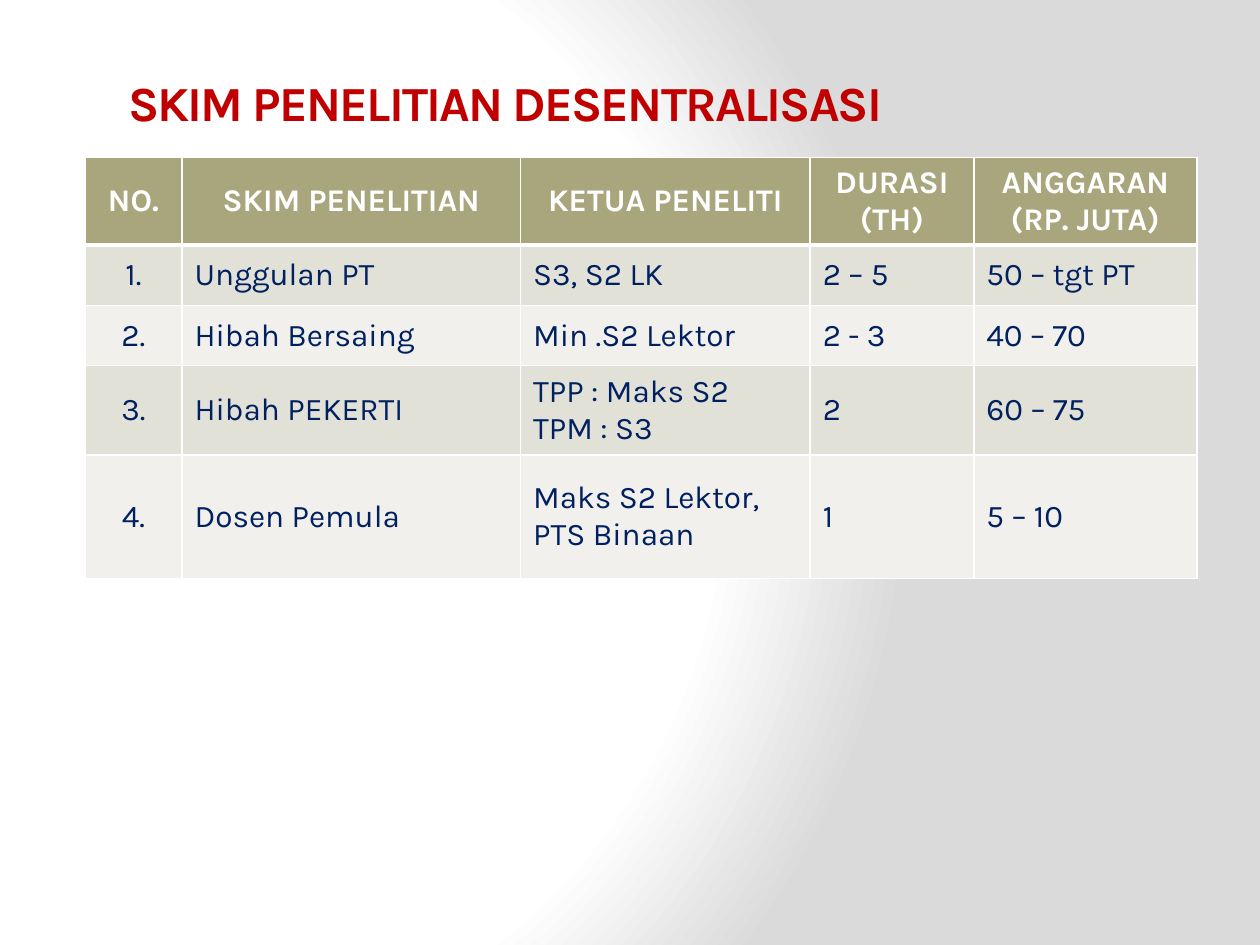
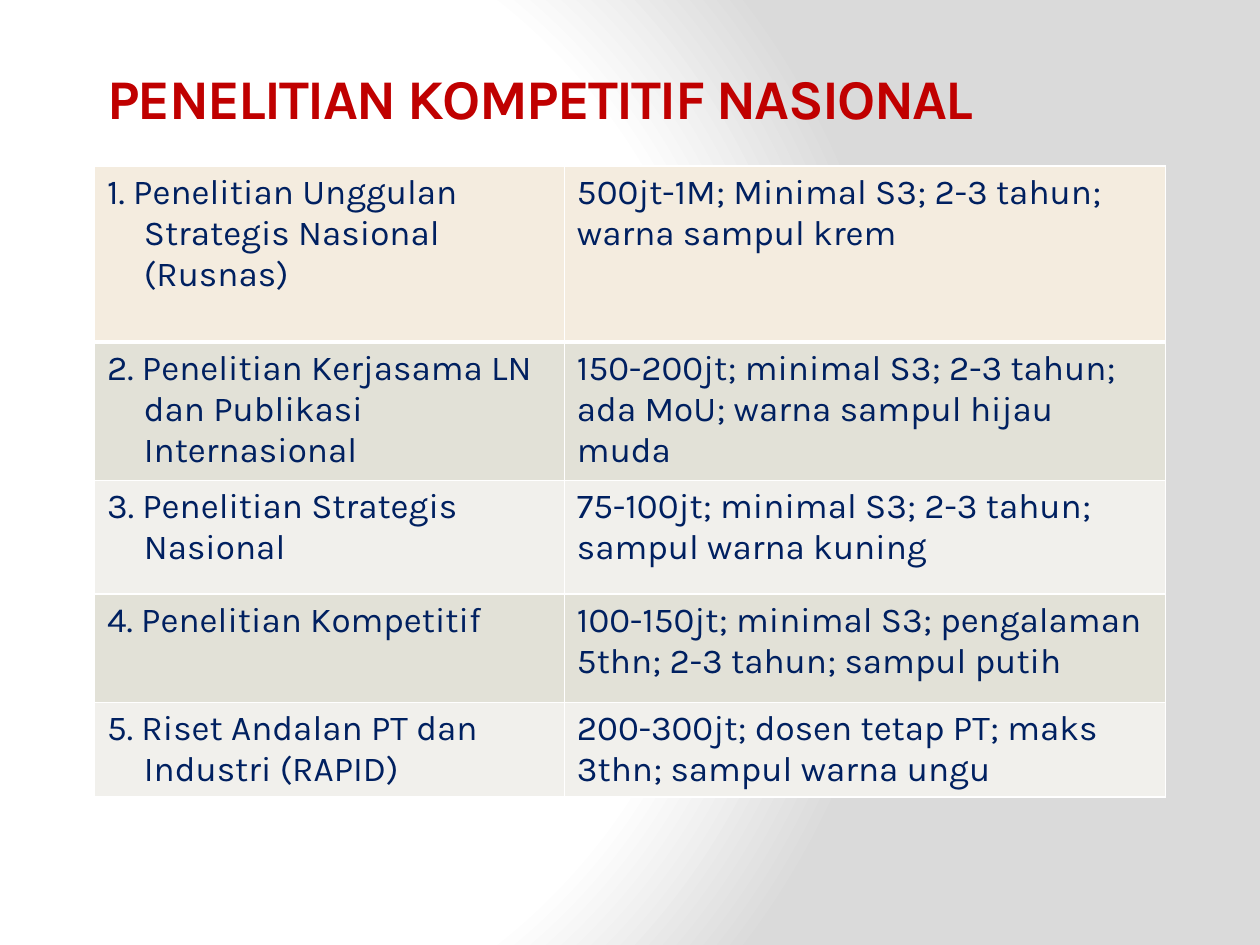
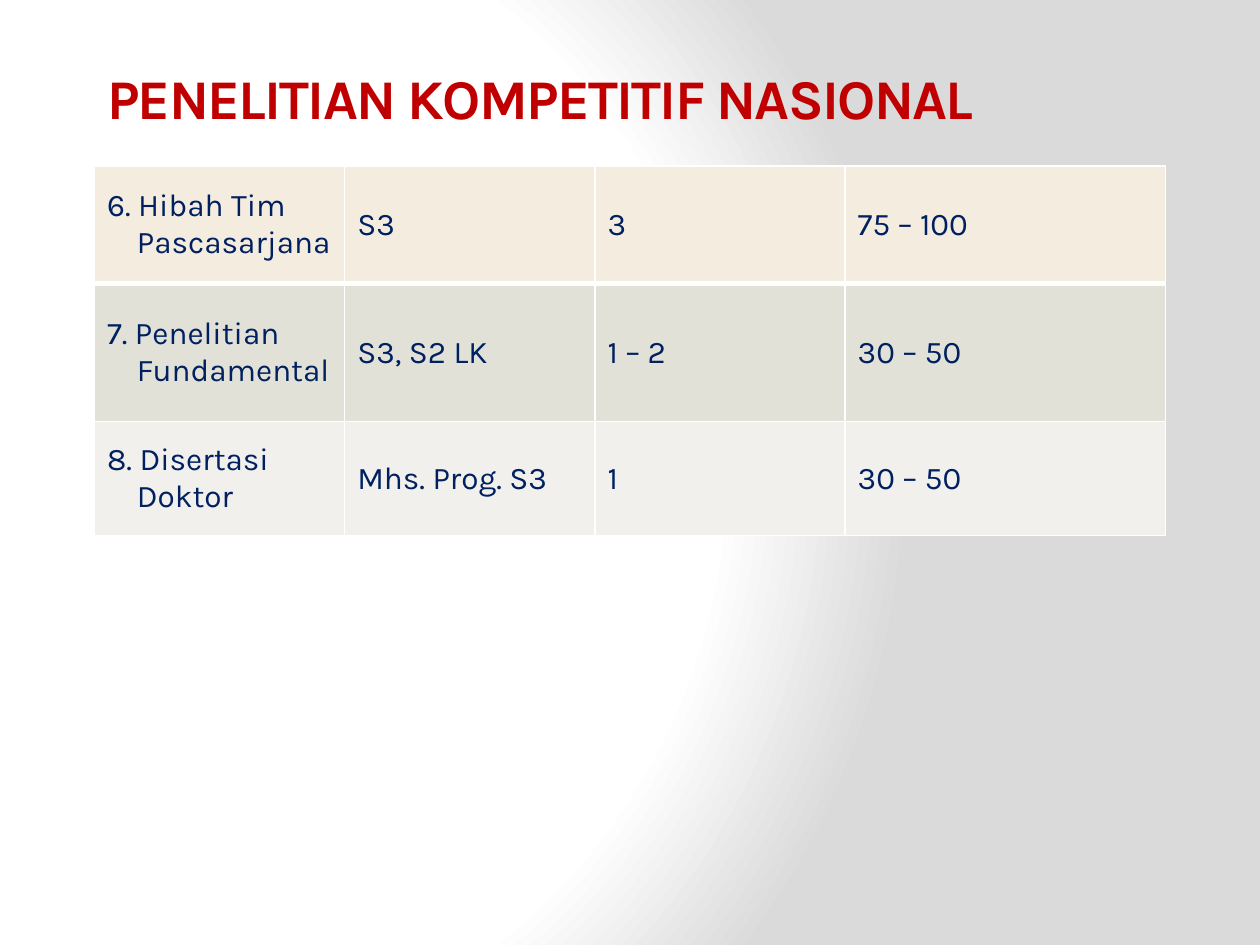
from lxml.etree import SubElement
from pptx import Presentation
from pptx.dml.color import RGBColor
from pptx.enum.text import MSO_ANCHOR, MSO_AUTO_SIZE, PP_ALIGN
from pptx.oxml import parse_xml
from pptx.oxml.ns import nsdecls, qn
from pptx.util import Pt

FONT = "Karla"
RED, NAVY, WHITE, GREY = "C00000", "002060", "FFFFFF", "DADADA"
OLIVE, CREAM = "A9A57C", "F4ECDF"
BANDS = ("F1F0EC", "E2E1D7")

SCHEMES = [
    ["NO.", "SKIM PENELITIAN", "KETUA PENELITI", "DURASI (TH)", "ANGGARAN (RP. JUTA)"],
    ["1.", "Unggulan PT", "S3, S2 LK", "2 – 5", "50 – tgt PT"],
    ["2.", "Hibah Bersaing", "Min .S2 Lektor", "2 - 3", "40 – 70"],
    ["3.", "Hibah PEKERTI", "TPP : Maks S2\nTPM : S3", "2", "60 – 75"],
    ["4.", "Dosen Pemula", "Maks S2 Lektor, PTS Binaan", "1", "5 – 10"],
]
NATIONAL = [
    ["1. Penelitian Unggulan Strategis Nasional (Rusnas)",
     "500jt-1M; Minimal S3; 2-3 tahun; warna sampul krem"],
    ["2. Penelitian Kerjasama LN dan Publikasi Internasional",
     "150-200jt; minimal S3; 2-3 tahun; ada MoU; warna sampul hijau muda"],
    ["3. Penelitian Strategis Nasional",
     "75-100jt; minimal S3; 2-3 tahun; sampul warna kuning"],
    ["4. Penelitian Kompetitif",
     "100-150jt; minimal S3; pengalaman 5thn; 2-3 tahun; sampul putih"],
    ["5. Riset Andalan PT dan Industri (RAPID)",
     "200-300jt; dosen tetap PT; maks 3thn; sampul warna ungu"],
]
POSTGRADUATE = [
    ["6. Hibah Tim\nPascasarjana", "S3", "3", "75 – 100"],
    ["7. Penelitian\nFundamental", "S3, S2 LK", "1 – 2", "30 – 50"],
    ["8. Disertasi\nDoktor", "Mhs. Prog. S3", "1", "30 – 50"],
]


def rgb(value):
    """Turn a hex string into a colour."""
    return RGBColor.from_string(value)


def write(tf, text, size=18, color=NAVY, bold=False, align=PP_ALIGN.LEFT,
          hang=0, next_indent=0, spacing=0):
    """Write one paragraph per line of text, all in the same format."""
    for i, line in enumerate(text.split("\n")):
        p = tf.add_paragraph() if i else tf.paragraphs[0]
        p.alignment = align
        margin = hang or (next_indent if i else 0)
        if margin:
            pPr = p._p.get_or_add_pPr()
            pPr.set("marL", str(Pt(margin)))
            pPr.set("indent", str(-Pt(hang)))
        r = p.add_run()
        r.text = line
        r.font.name, r.font.size, r.font.bold = FONT, Pt(size), bold
        r.font.color.rgb = rgb(color)
        if spacing:
            r._r.get_or_add_rPr().set("spc", str(spacing * 100))


def set_background(master):
    """Give the master a circular gradient from white to grey."""
    fill = master.background.fill
    fill.solid()
    fill.fore_color.rgb = rgb(WHITE)
    stops = "".join(
        f'<a:gs pos="{pos * 1000}"><a:srgbClr val="{color}"/></a:gs>'
        for pos, color in ((0, WHITE), (75, WHITE), (100, GREY)))
    gradient = parse_xml(
        f'<a:gradFill {nsdecls("a")} rotWithShape="1"><a:gsLst>{stops}</a:gsLst>'
        '<a:path path="circle"><a:fillToRect l="20000" t="50000" r="100000" b="50000"/>'
        '</a:path></a:gradFill>')
    solid = master.element.find(".//" + qn("p:bgPr")).find(qn("a:solidFill"))
    solid.getparent().replace(solid, gradient)


def set_borders(cell, top, bottom):
    """Draw white borders round a cell, with top and bottom widths in points."""
    tcPr = cell._tc.get_or_add_tcPr()
    widths = (("a:lnL", 1), ("a:lnR", 1), ("a:lnT", top), ("a:lnB", bottom))
    for i, (tag, width) in enumerate(widths):
        ln = SubElement(tcPr, qn(tag), w=str(Pt(width)))
        SubElement(SubElement(ln, qn("a:solidFill")), qn("a:srgbClr"), val=WHITE)
        tcPr.insert(i, ln)


def add_slide(prs, title, left=54, width=630, height=68.5, size=32):
    """Add a slide with a red title."""
    s = prs.slides.add_slide(prs.slide_layouts[5])
    sp = s.shapes.title
    sp.left, sp.top, sp.width, sp.height = Pt(left), Pt(21.5), Pt(width), Pt(height)
    tf = sp.text_frame
    tf.auto_size, tf.vertical_anchor = MSO_AUTO_SIZE.NONE, MSO_ANCHOR.MIDDLE
    write(tf, title, size=size, color=RED, bold=True, spacing=-1)
    return s


def add_table(s, rows, widths, heights, left=54, top=95, first_fill=CREAM,
              anchor=MSO_ANCHOR.MIDDLE, size=18, header=None, first_column=None):
    """Add a banded table; header and first_column hold extra text formats."""
    table = s.shapes.add_table(len(rows), len(widths), Pt(left), Pt(top),
                               Pt(sum(widths)), Pt(sum(heights))).table
    table.horz_banding = False
    for column, width in zip(table.columns, widths):
        column.width = Pt(width)
    for i, (row, height) in enumerate(zip(rows, heights)):
        table.rows[i].height = Pt(height)
        for j, text in enumerate(row):
            cell = table.cell(i, j)
            cell.vertical_anchor = anchor
            cell.fill.solid()
            cell.fill.fore_color.rgb = rgb(BANDS[i % 2] if i else first_fill)
            set_borders(cell, 3 if i == 1 else 1, 1 if i else 3)
            style = {"size": size}
            if j == 0:
                style.update(first_column or {})
            if i == 0:
                style.update(header or {})
            write(cell.text_frame, text, **style)


def main():
    """Build the three slides and save them."""
    prs = Presentation()
    prs.slide_width, prs.slide_height = Pt(720), Pt(540)
    set_background(prs.slide_master)

    s = add_slide(prs, "SKIM PENELITIAN DESENTRALISASI",
                  left=66, width=570, height=74, size=28)
    add_table(s, SCHEMES, (55.5, 193.5, 165.5, 93.5, 127.5), (50, 34.5, 34.5, 51, 70.5),
              left=48.5, top=90, first_fill=OLIVE,
              header={"color": WHITE, "bold": True, "align": PP_ALIGN.CENTER},
              first_column={"align": PP_ALIGN.CENTER})

    s = add_slide(prs, "PENELITIAN KOMPETITIF NASIONAL")
    add_table(s, NATIONAL, (268.5, 343.5), (100.5, 79, 65, 62, 54),
              anchor=MSO_ANCHOR.TOP, size=20, first_column={"hang": 21})

    s = add_slide(prs, "PENELITIAN KOMPETITIF NASIONAL")
    add_table(s, POSTGRADUATE, (143, 143, 143, 183), (67, 79, 65),
              first_column={"next_indent": 17})

    prs.save("out.pptx")


if __name__ == "__main__":
    main()
